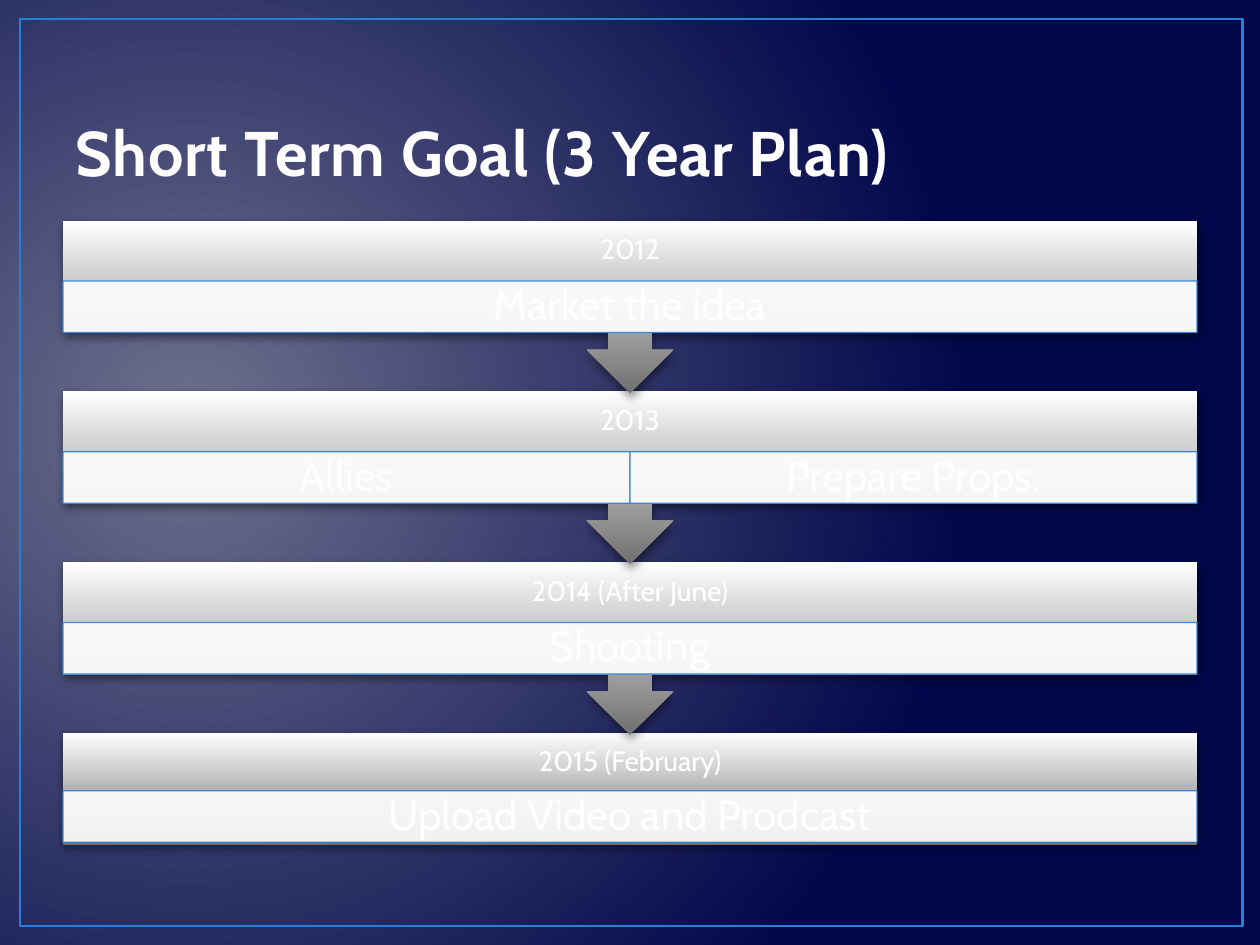
"""Build a three-year plan slide as a downward chain of yearly steps."""
from pptx import Presentation
from pptx.dml.color import RGBColor
from pptx.enum.shapes import MSO_SHAPE
from pptx.enum.text import MSO_ANCHOR, PP_ALIGN
from pptx.oxml import parse_xml
from pptx.oxml.ns import nsdecls, qn
from pptx.util import Inches, Pt

RECT, CALLOUT = MSO_SHAPE.RECTANGLE, MSO_SHAPE.UP_ARROW_CALLOUT
MIDDLE, BOTTOM = MSO_ANCHOR.MIDDLE, MSO_ANCHOR.BOTTOM
CENTER, LEFT = PP_ALIGN.CENTER, PP_ALIGN.LEFT

THEME = {
    "font": "Cabin",
    "white": RGBColor.from_string("FFFFFF"),
    "title": RGBColor.from_string("FEFEFE"),
    "blue": RGBColor.from_string("297FD5"),
    "edge": "234F77",
    "steel": [(0, "707070"), (50, "B4B4B4"), (70, "D3D3D3"), (100, "FFFFFF")],
    "night": [(0, "6E708E"), (100, "01074A")],
    "head": Pt(36), "year": Pt(16), "task": Pt(24),
}
STEPS = [
    ("2012", ["Market the idea"]),
    ("2013", ["Allies", "Prepare Props."]),
    ("2014 (After June)", ["Shooting"]),
    ("2015 (February)", ["Upload Video and Prodcast"]),
]


def shade(fill, root, stops, form):
    """Give a fill its colour stops and direction."""
    fill.gradient()
    old = root.find(".//" + qn("a:gradFill"))
    marks = "".join(
        f'<a:gs pos="{pos * 1000}"><a:srgbClr val="{tone}"/></a:gs>' for pos, tone in stops)
    old.getparent().replace(old, parse_xml(
        f'<a:gradFill {nsdecls("a")} rotWithShape="0"><a:gsLst>{marks}</a:gsLst>{form}</a:gradFill>'))


def label(shape, text, size, tone, pad, anchor=MIDDLE, align=CENTER):
    """Write one formatted line into a shape and return its run."""
    frame = shape.text_frame
    frame.text = text
    frame.word_wrap = True
    frame.vertical_anchor = anchor
    frame.margin_left = frame.margin_right = Inches(pad[0])
    frame.margin_top = frame.margin_bottom = Inches(pad[1])
    line = frame.paragraphs[0]
    line.alignment = align
    run = line.runs[0]
    run.font.name, run.font.size, run.font.color.rgb = THEME["font"], size, tone
    return run


deck = Presentation()
deck.slide_width, deck.slide_height = Inches(10), Inches(7.5)
slide = deck.slides.add_slide(deck.slide_layouts[5])
shapes = slide.shapes
shade(slide.background.fill, slide.element, THEME["night"],
      '<a:path path="circle"><a:fillToRect l="15000" t="50000" r="85000" b="60000"/></a:path>')

frame = shapes.add_shape(RECT, Inches(0.16), Inches(0.15), Inches(9.7), Inches(7.2))
frame.shadow.inherit = False
frame.fill.background()
frame.line.color.rgb, frame.line.width = THEME["blue"], Pt(1.5)

left, width = Inches(0.5), Inches(9)
title = shapes.title
title.left, title.top, title.width, title.height = left, Inches(0.3), width, Inches(1.25)
run = label(title, "Short Term Goal (3 Year Plan)", THEME["head"], THEME["title"],
            (0.1, 0.05), BOTTOM, LEFT)
run.font.bold = True
props = run.font._element
props.set("spc", "50")
props.insert(0, parse_xml(
    f'<a:ln {nsdecls("a")} w="{Pt(1.05)}"><a:solidFill>'
    f'<a:srgbClr val="{THEME["edge"]}"/></a:solidFill></a:ln>'))

first, pitch = Inches(1.75), Inches(1.355)
band, row = Inches(0.48), Inches(0.41)
final = len(STEPS) - 1

for i, (year, tasks) in reversed(list(enumerate(STEPS))):
    top = first + i * pitch
    kind, tall, drop = (RECT, 0.89, 0.46) if i == final else (CALLOUT, 1.37, 0.48)
    bar = shapes.add_shape(kind, left, top, width, Inches(tall))
    bar.rotation = 0 if i == final else 180
    shade(bar.fill, bar.element, THEME["steel"], '<a:lin ang="16200000" scaled="0"/>')
    bar.line.fill.background()
    bar.shadow.inherit = False
    bar.element.spPr.find(qn("a:effectLst")).append(parse_xml(
        f'<a:outerShdw {nsdecls("a")} blurRad="{Pt(5)}" dist="{Pt(2)}" dir="5400000" '
        'rotWithShape="0"><a:srgbClr val="000000"><a:alpha val="43000"/></a:srgbClr></a:outerShdw>'))

    name = shapes.add_textbox(left, top, width, band)
    label(name, year, THEME["year"], THEME["white"], (0.12, 0.12))
    name.text_frame.paragraphs[0].line_spacing = 0.9

    part = width // len(tasks)
    for j, task in enumerate(tasks):
        cell = shapes.add_shape(RECT, left + j * part, top + Inches(drop), part, row)
        cell.shadow.inherit = False
        cell.fill.solid()
        cell.fill.fore_color.rgb = THEME["white"]
        cell.line.color.rgb, cell.line.width = THEME["blue"], Pt(0.75)
        for tone in cell.element.spPr.iter(qn("a:srgbClr")):
            tone.append(parse_xml(f'<a:alpha {nsdecls("a")} val="90000"/>'))
        label(cell, task, THEME["task"], THEME["white"], (0.19, 0.03))
        cell.text_frame.paragraphs[0].line_spacing = 0.9

deck.save("out.pptx")
